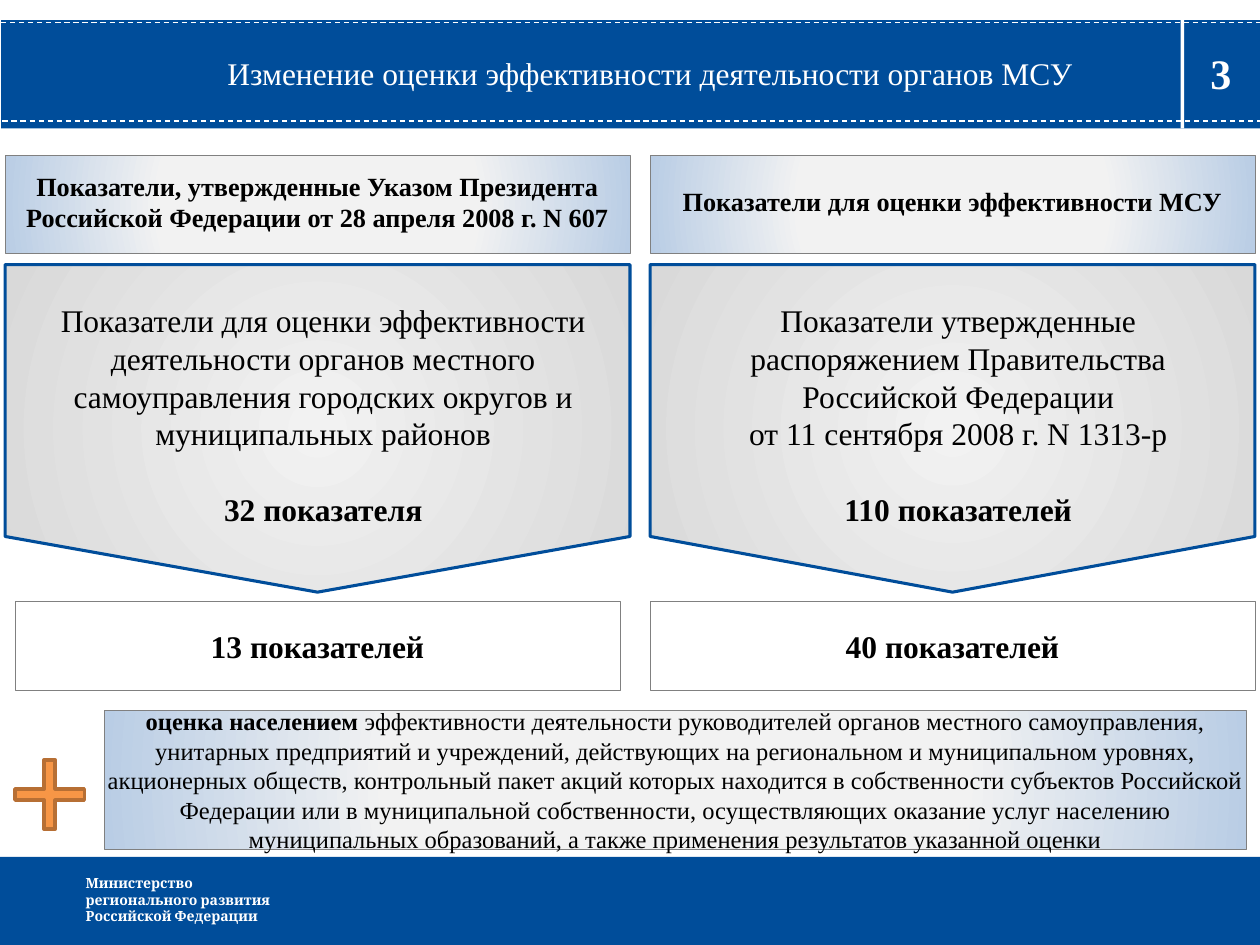
import pptx
import pptx.dml.color
import pptx.enum.dml
import pptx.enum.shapes
import pptx.enum.text
import pptx.oxml
import pptx.oxml.ns
import pptx.util
from dataclasses import dataclass

Pt = pptx.util.Pt
SHAPES = pptx.enum.shapes.MSO_SHAPE
ALIGN = pptx.enum.text.PP_ALIGN
ANCHOR = pptx.enum.text.MSO_ANCHOR
qn = pptx.oxml.ns.qn


@dataclass(frozen=True)
class Theme:
    blue: str = "004D9A"
    white: str = "FFFFFF"
    black: str = "000000"
    grey_line: str = "808080"
    orange: str = "F79646"
    orange_line: str = "B76F34"
    header_stops: tuple = ((0, "F2F2F2"), (50, "F2F2F2"), (100, "B9CDE5"))
    arrow_stops: tuple = ((0, "F2F2F2"), (100, "D9D9D9"))
    font: str = "Times New Roman"
    footer_font: str = "Cambria"
    number: float = 24
    body: float = 18
    header: float = 15
    note: float = 14
    footer: float = 8


THEME = Theme()

TITLE = "Изменение оценки эффективности деятельности органов МСУ"
PAGE = "3"
MINISTRY = ["Министерство", "регионального развития", "Российской Федерации"]
COLUMNS = [
    {
        "left": 2.9, "width": 357.1,
        "header": ["Показатели, утвержденные Указом Президента",
                   "Российской Федерации от 28 апреля 2008 г. N 607"],
        "basis": ["Показатели для оценки эффективности деятельности органов местного "
                  "самоуправления городских округов и муниципальных районов"],
        "before": "32 показателя",
        "after": "13 показателей",
    },
    {
        "left": 371.5, "width": 345.6,
        "header": ["Показатели для оценки эффективности МСУ"],
        "basis": ["Показатели утвержденные", "распоряжением Правительства",
                  "Российской Федерации", "от 11 сентября 2008 г. N 1313-р"],
        "before": "110 показателей",
        "after": "40 показателей",
    },
]
SURVEY = [
    ("оценка населением ", True),
    ("эффективности деятельности руководителей органов местного самоуправления, "
     "унитарных предприятий и учреждений, действующих на региональном и муниципальном "
     "уровнях, акционерных обществ, контрольный пакет акций которых находится в "
     "собственности субъектов Российской Федерации или в муниципальной собственности, "
     "осуществляющих оказание услуг населению муниципальных образований, а также "
     "применения результатов указанной оценки", False),
]

HEADER_TOP, HEADER_HEIGHT = 88.6, 56.2
ARROW_TOP, ARROW_HEIGHT = 151.2, 187.2
RESULT_TOP, RESULT_WIDTH, RESULT_HEIGHT = 343.4, 345.6, 51.1


def rgb(value):
    return pptx.dml.color.RGBColor.from_string(value)


def write(shape, paragraphs, size=THEME.body, color=THEME.black, font=THEME.font,
          bold=False, align=ALIGN.CENTER, anchor=ANCHOR.MIDDLE, spacing=None,
          before=0, last_before=None, indent=0, insets=(7.2, 3.6)):
    """Fill a shape; a paragraph is a string or a list of (text, bold) runs."""
    frame = shape.text_frame
    frame.word_wrap = True
    frame.auto_size = pptx.enum.text.MSO_AUTO_SIZE.NONE
    frame.vertical_anchor = anchor
    frame.margin_left = frame.margin_right = Pt(insets[0])
    frame.margin_top = frame.margin_bottom = Pt(insets[1])
    for index, content in enumerate(paragraphs):
        paragraph = frame.add_paragraph() if index else frame.paragraphs[0]
        paragraph.alignment = align
        is_last = index == len(paragraphs) - 1
        gap = last_before if is_last and last_before is not None else before
        paragraph.space_before = Pt(gap if index else 0)
        if spacing:
            paragraph.line_spacing = spacing
        if indent:
            properties = paragraph._p.get_or_add_pPr()
            properties.set("marL", str(Pt(indent)))
            properties.set("indent", "0")
        runs = [(content, bold)] if isinstance(content, str) else content
        for text, run_bold in runs:
            run = paragraph.add_run()
            run.text = text
            run.font.name = font
            run.font.size = Pt(size)
            run.font.bold = run_bold
            run.font.color.rgb = rgb(color)


def fill_radial(shape, stops):
    shape.fill.gradient()
    gradient = shape._element.spPr.find(qn("a:gradFill"))
    marks = "".join(f'<a:gs pos="{position * 1000}"><a:srgbClr val="{color}"/></a:gs>'
                    for position, color in stops)
    source = pptx.oxml.parse_xml(
        f'<a:gradFill {pptx.oxml.ns.nsdecls("a")}><a:gsLst>{marks}</a:gsLst>'
        '<a:path path="circle"><a:fillToRect l="50000" t="50000" r="50000" b="50000"/>'
        '</a:path></a:gradFill>')
    gradient[:] = list(source)


def add_block(slide, kind, left, top, width, height, fill, line=None, weight=0.25):
    """Add a preset shape; fill is a colour or a tuple of gradient stops."""
    block = slide.shapes.add_shape(kind, Pt(left), Pt(top), Pt(width), Pt(height))
    block.shadow.inherit = False
    if isinstance(fill, str):
        block.fill.solid()
        block.fill.fore_color.rgb = rgb(fill)
    else:
        fill_radial(block, fill)
    if line:
        block.line.color.rgb = rgb(line)
        block.line.width = Pt(weight)
    else:
        block.line.fill.background()
    return block


def add_stitch(slide, left, y):
    stitch = slide.shapes.add_connector(pptx.enum.shapes.MSO_CONNECTOR.STRAIGHT,
                                        Pt(left), Pt(y), Pt(left + 720), Pt(y))
    stitch.line.color.rgb = rgb(THEME.white)
    stitch.line.width = Pt(0.75)
    stitch.line.dash_style = pptx.enum.dml.MSO_LINE.DASH
    stitch._element.spPr.append(
        pptx.oxml.parse_xml(f'<a:effectLst {pptx.oxml.ns.nsdecls("a")}/>'))


def add_label(slide, left, top, width, height, paragraphs, **style):
    label = slide.shapes.add_textbox(Pt(left), Pt(top), Pt(width), Pt(height))
    write(label, paragraphs, color=THEME.white, bold=True, anchor=ANCHOR.TOP, **style)


def add_down_arrow(slide, left, top, width, height):
    """Turn a pentagon to point down, with its text kept upright."""
    arrow = add_block(slide, SHAPES.PENTAGON, left + (width - height) / 2,
                      top + (height - width) / 2, height, width,
                      THEME.arrow_stops, THEME.blue, 1.75)
    arrow.adjustments[0] = 0.17
    arrow.rotation = 90
    arrow.text_frame._txBody.bodyPr.set("vert", "vert270")
    return arrow


def add_banner(slide):
    add_block(slide, SHAPES.RECTANGLE, 0.7, 11.5, 719.3, 61.9, THEME.blue)
    add_stitch(slide, 1.4, 69.1)
    add_stitch(slide, 0.7, 13)
    title = slide.shapes.title
    title.left, title.top, title.width, title.height = map(Pt, (70.6, 32.4, 601.9, 22.3))
    write(title, [TITLE], color=THEME.white, spacing=0.8, insets=(4.3, 2.2))
    slide.shapes.element.append(title.element)
    add_block(slide, SHAPES.RECTANGLE, 674.6, 10.8, 2, 62.6, THEME.white)
    add_label(slide, 675.4, 23.8, 44.6, 36, [PAGE], size=THEME.number)


def add_column(slide, column):
    left, width = column["left"], column["width"]
    header = add_block(slide, SHAPES.RECTANGLE, left, HEADER_TOP, width, HEADER_HEIGHT,
                       THEME.header_stops, THEME.grey_line)
    write(header, column["header"], size=THEME.header, bold=True, spacing=0.8, before=3)
    arrow = add_down_arrow(slide, left, ARROW_TOP, width, ARROW_HEIGHT)
    write(arrow, column["basis"] + [[(column["before"], True)]],
          indent=6.5, last_before=21.6)
    result = add_block(slide, SHAPES.RECTANGLE, left + (width - RESULT_WIDTH) / 2,
                       RESULT_TOP, RESULT_WIDTH, RESULT_HEIGHT,
                       THEME.white, THEME.grey_line)
    write(result, [column["after"]], bold=True)


def main():
    deck = pptx.Presentation()
    deck.slide_width, deck.slide_height = Pt(720), Pt(540)
    slide = deck.slides.add_slide(deck.slide_layouts[5])
    add_banner(slide)
    add_block(slide, SHAPES.RECTANGLE, -0.7, 489.6, 721.4, 50.4, THEME.blue)
    add_label(slide, 41.8, 496.1, 183.6, 36, MINISTRY, size=THEME.footer,
              font=THEME.footer_font, align=ALIGN.LEFT)
    for column in COLUMNS:
        add_column(slide, column)
    plus = add_block(slide, SHAPES.CROSS, 8.6, 434.2, 39.6, 39.6,
                     THEME.orange, THEME.orange_line, 2)
    plus.adjustments[0] = 0.42
    survey = add_block(slide, SHAPES.RECTANGLE, 59.8, 406.1, 652.3, 79.2,
                       THEME.header_stops, THEME.grey_line)
    write(survey, [SURVEY], size=THEME.note, insets=(0, 0))
    deck.save("out.pptx")


if __name__ == "__main__":
    main()
